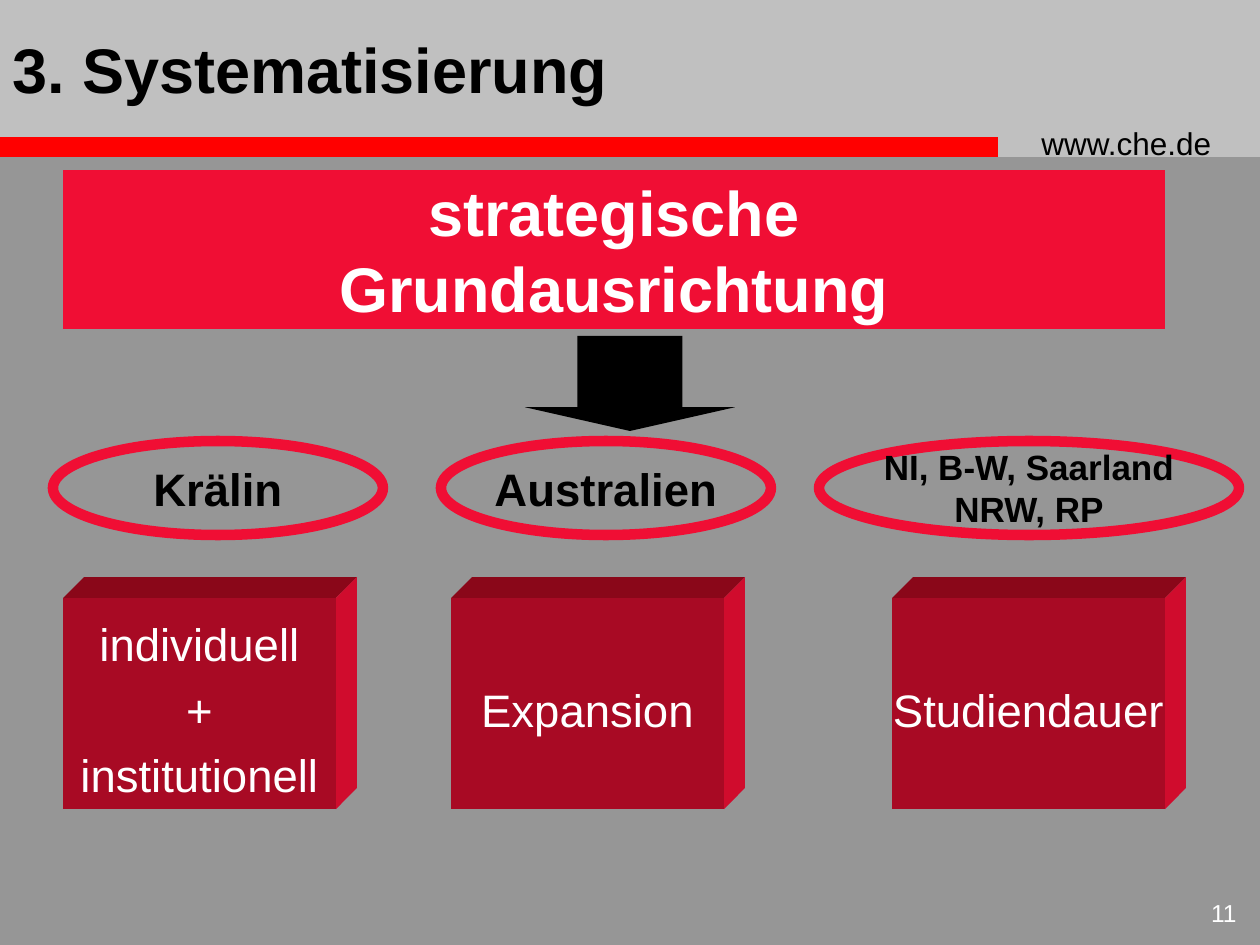
import dataclasses

import pptx
import pptx.dml.color
import pptx.enum.shapes
import pptx.enum.text
import pptx.util

SCALE = 914400 / 126  # EMU per px
FONT = "Arial"
COLORS = {
    "background": "969696",
    "header": "C0C0C0",
    "bar": "FF0000",
    "accent": "F00E34",
    "front": "A80A24",
    "top": "8A0719",
    "side": "D00C2D",
    "dark": "000000",
    "light": "FFFFFF",
}
SHAPES = pptx.enum.shapes.MSO_SHAPE
ALIGN = pptx.enum.text.PP_ALIGN
ANCHOR = pptx.enum.text.MSO_ANCHOR

CARD_TOP, CARD_WIDTH, CARD_HEIGHT, CARD_DEPTH = 598, 273, 211, 21
OVAL_TOP, OVAL_HEIGHT = 441, 94


@dataclasses.dataclass(frozen=True)
class Area:
    left: int
    top: int
    width: int
    height: int

    def emu(self) -> list[int]:
        return [round(value * SCALE) for value in dataclasses.astuple(self)]


@dataclasses.dataclass(frozen=True)
class Example:
    """An oval naming a case, above a card stating its strategy."""
    oval_left: int
    oval_width: int
    case: str
    case_size: int
    card_left: int
    strategy: str


EXAMPLES = [
    Example(53, 330, "Krälin", 26, 63, "individuell\n+\ninstitutionell"),
    Example(441, 330, "Australien", 26, 451, "Expansion"),
    Example(819, 420, "NI, B-W, Saarland\nNRW, RP", 20, 892, "Studiendauer"),
]


def rgb(name: str) -> pptx.dml.color.RGBColor:
    return pptx.dml.color.RGBColor.from_string(COLORS[name])


def write(box, text: str, *, size: int, color: str = "dark", bold: bool = False,
          align=ALIGN.CENTER, anchor=ANCHOR.MIDDLE, spacing: float = 1.0,
          wrap: bool = False) -> None:
    """Fill a box with one paragraph for each line of text."""
    frame = box.text_frame
    frame.word_wrap = wrap
    frame.vertical_anchor = anchor
    for index, line in enumerate(text.split("\n")):
        para = frame.add_paragraph() if index else frame.paragraphs[0]
        para.alignment = align
        para.line_spacing = spacing
        span = para.add_run()
        span.text = line
        span.font.name = FONT
        span.font.size = pptx.util.Pt(size)
        span.font.bold = bold
        span.font.color.rgb = rgb(color)


def paint(shape, color: str) -> None:
    shape.shadow.inherit = False
    shape.fill.solid()
    shape.fill.fore_color.rgb = rgb(color)
    shape.line.fill.background()


def add_block(page, kind, area: Area, color: str):
    shape = page.shapes.add_shape(kind, *area.emu())
    paint(shape, color)
    return shape


def add_label(page, area: Area, text: str, **style) -> None:
    write(page.shapes.add_textbox(*area.emu()), text, wrap=True, **style)


def add_face(page, points: list[tuple[int, int]], color: str) -> None:
    builder = page.shapes.build_freeform(*points[0], scale=SCALE)
    builder.add_line_segments(points[1:], close=True)
    paint(builder.convert_to_shape(), color)


def add_oval(page, example: Example) -> None:
    area = Area(example.oval_left, OVAL_TOP, example.oval_width, OVAL_HEIGHT)
    oval = page.shapes.add_shape(SHAPES.OVAL, *area.emu())
    oval.shadow.inherit = False
    oval.fill.background()
    oval.line.color.rgb = rgb("accent")
    oval.line.width = pptx.util.Pt(6)
    write(oval, example.case, size=example.case_size, bold=True)


def add_card(page, example: Example) -> None:
    """Draw a front with a top and a right face behind it."""
    left, right = example.card_left, example.card_left + CARD_WIDTH
    top, bottom = CARD_TOP, CARD_TOP + CARD_HEIGHT
    back_right, back_top = right + CARD_DEPTH, top - CARD_DEPTH
    add_face(page, [(left, top), (left + CARD_DEPTH, back_top),
                    (back_right, back_top), (right, top)], "top")
    add_face(page, [(right, top), (back_right, back_top),
                    (back_right, bottom - CARD_DEPTH), (right, bottom)], "side")
    front = add_block(page, SHAPES.RECTANGLE,
                      Area(left, top, CARD_WIDTH, CARD_HEIGHT), "front")
    write(front, example.strategy, size=26, color="light", spacing=1.2)


def main() -> None:
    deck = pptx.Presentation()
    deck.slide_width, deck.slide_height = Area(0, 0, 1260, 945).emu()[2:]
    page = deck.slides.add_slide(deck.slide_layouts[6])
    page.background.fill.solid()
    page.background.fill.fore_color.rgb = rgb("background")

    add_block(page, SHAPES.RECTANGLE, Area(0, 0, 1260, 157), "header")
    add_block(page, SHAPES.RECTANGLE, Area(0, 137, 998, 20), "bar")
    add_label(page, Area(1029, 118, 221, 50), "www.che.de", size=18,
              align=ALIGN.LEFT, anchor=ANCHOR.TOP)
    add_label(page, Area(1176, 892, 73, 53), "11", size=14, color="light",
              align=ALIGN.RIGHT, anchor=ANCHOR.TOP)
    add_label(page, Area(0, 0, 1018, 136), "3. Systematisierung", size=36,
              bold=True, align=ALIGN.LEFT)

    banner = add_block(page, SHAPES.RECTANGLE, Area(63, 170, 1102, 159), "accent")
    write(banner, "strategische\nGrundausrichtung", size=36, color="light", bold=True)
    arrow = add_block(page, SHAPES.DOWN_ARROW, Area(525, 336, 210, 95), "dark")
    arrow.adjustments[0], arrow.adjustments[1] = 0.5, 0.25

    for example in EXAMPLES:
        add_oval(page, example)
        add_card(page, example)

    deck.save("out.pptx")


if __name__ == "__main__":
    main()
